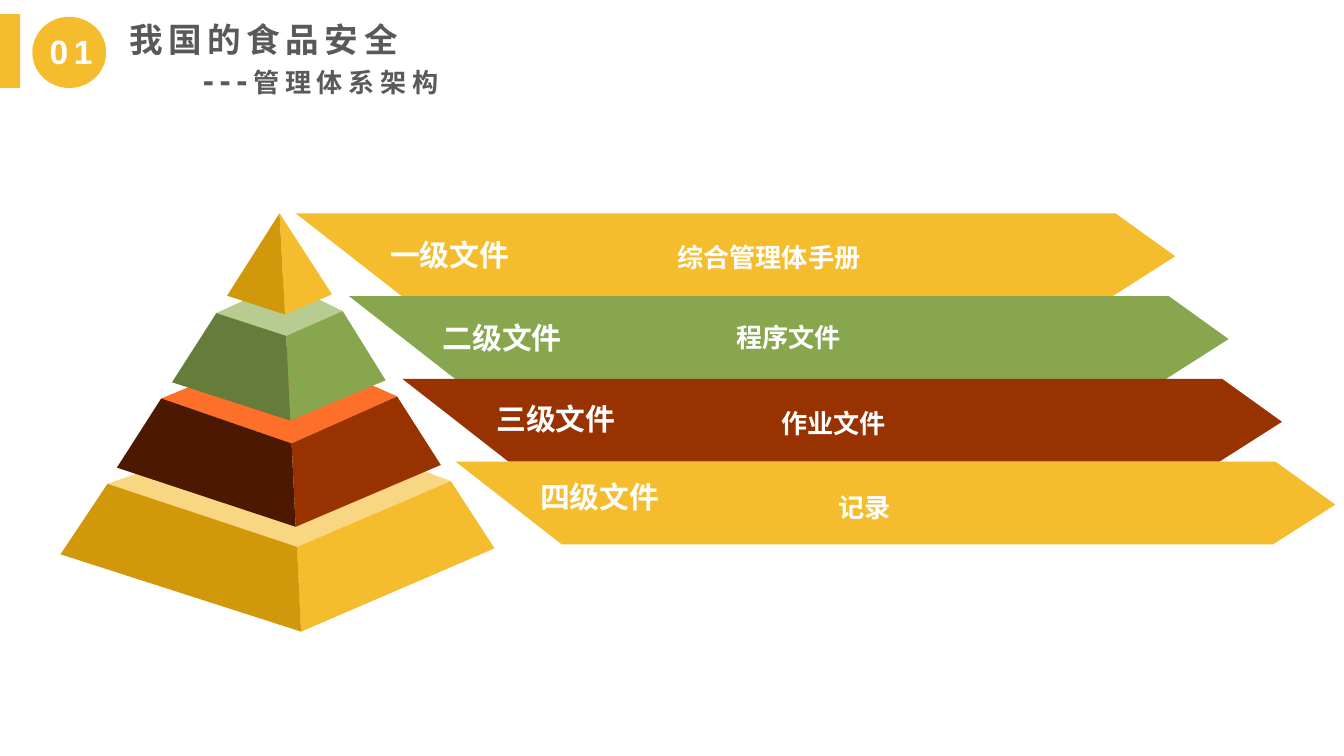
from pptx import Presentation
from pptx.dml.color import RGBColor
from pptx.enum.shapes import MSO_SHAPE
from pptx.enum.text import MSO_ANCHOR, MSO_AUTO_SIZE, PP_ALIGN
from pptx.oxml.ns import qn
from pptx.util import Inches, Pt
from lxml.etree import SubElement

CELL = Inches(0.1)
COLS, ROWS = 100, 56.25
AMBER, GREEN, RUST, WHITE, GREY = "F5BD2E", "88A64E", "983201", "FFFFFF", "595959"
CJK = "Noto Sans CJK SC"

BAND_TOP, BAND_LEFT, BAND_STEP, BAND_HEIGHT = 15.87, 22, 3.97, 6.16
BAND_OUTLINE = [(0, 0), (61, 0), (65.45, 3.2), (60.8, BAND_HEIGHT), (7.9, BAND_HEIGHT)]
BANDS = [
    (AMBER, "一级文件", (28.05, 17.1), "综合管理体手册", (49.4, 17.45)),
    (GREEN, "二级文件", (31.95, 23.3), "程序文件", (53.8, 23.4)),
    (RUST, "三级文件", (35.95, 29.3), "作业文件", (57.15, 29.8)),
    (AMBER, "四级文件", (39.2, 35.1), "记录", (61.4, 36.05)),
]

APEX = (20.8, 15.87)
TIERS = [
    (("F9D782", AMBER, "D0980A"), (21.6, 31.3), [(8, 36), (22.1, 40.7), (33.55, 35.8)],
     [(4.5, 41.25), (22.4, 47), (36.8, 40.8)]),
    (("FE6F2A", RUST, "4C1900"), (21.3, 25.8), [(12, 29.65), (21.7, 33), (29.55, 29.5)],
     [(8.7, 34.8), (22, 39.2), (32.8, 34.6)]),
    (("B8CC92", GREEN, "667C3B"), (21.1, 21), [(16.1, 23.3), (21.3, 25), (25.5, 23.15)],
     [(12.8, 28.45), (21.6, 31.3), (28.7, 28.3)]),
    ((None, AMBER, "D0980A"), APEX, [APEX] * 3,
     [(16.9, 22), (21.2, 23.4), (24.7, 21.9)]),
]


def cells(*values):
    return [round(v * CELL) for v in values]


def rgb(value):
    return RGBColor.from_string(value)


def paint(sp, color):
    sp.shadow.inherit = False
    sp.fill.solid()
    sp.fill.fore_color.rgb = rgb(color)
    sp.line.fill.background()


def add_preset(shapes, kind, box, color):
    paint(shapes.add_shape(kind, *cells(*box)), color)


def add_polygon(shapes, points, color):
    start, *rest = [tuple(cells(*point)) for point in points]
    builder = shapes.build_freeform(*start)
    builder.add_line_segments(rest, close=True)
    paint(builder.convert_to_shape(), color)


def add_run(p, text, size, color, font=CJK, spacing=0):
    r = p.add_run()
    r.text = text
    r.font.size = Pt(size)
    r.font.bold = True
    r.font.name = font
    r.font.color.rgb = rgb(color)
    SubElement(r.font._element, qn("a:ea")).set("typeface", CJK)
    if spacing:
        r.font._element.set("spc", str(spacing * 100))


def add_break(p, size):
    p.add_line_break()
    SubElement(p._p[-1], qn("a:rPr")).set("sz", str(size * 100))


def set_frame(tf, side, edge, wrap=True):
    tf.margin_left = tf.margin_right = Inches(side)
    tf.margin_top = tf.margin_bottom = Inches(edge)
    tf.word_wrap = wrap
    tf.vertical_anchor = MSO_ANCHOR.TOP
    tf.auto_size = MSO_AUTO_SIZE.SHAPE_TO_FIT_TEXT


def add_label(shapes, text, place, size, width, height, align=PP_ALIGN.LEFT):
    tf = shapes.add_textbox(*cells(*place, width, height)).text_frame
    set_frame(tf, 0.1, 0.05)
    p = tf.paragraphs[0]
    p.alignment = align
    add_run(p, text, size, WHITE)


def add_header(s):
    add_preset(s.shapes, MSO_SHAPE.OVAL, (2.4, 1.25, 5.5, 5.3), AMBER)
    add_preset(s.shapes, MSO_SHAPE.RECTANGLE, (-0.1, 1.05, 1.6, 5.5), AMBER)
    tf = s.shapes.add_textbox(*cells(3, 1.9, 5, 3.7)).text_frame
    set_frame(tf, 0.07, 0.04, wrap=False)
    add_run(tf.paragraphs[0], "01", 18, WHITE, "Arial", 3)

    title = s.shapes.title
    title.left, title.top, title.width, title.height = cells(7.9, 1, 44.9, 6.8)
    tf = title.text_frame
    set_frame(tf, 0.07, 0.04)
    p = tf.paragraphs[0]
    p.alignment = PP_ALIGN.LEFT
    hanging = p._p.get_or_add_pPr()
    hanging.set("marL", str(Inches(0.65)))
    hanging.set("indent", str(Inches(-0.55)))
    add_run(p, "我国的食品安全", 18, GREY, "Arial", 3)
    add_break(p, 18)
    add_run(p, "---", 18, GREY, "Arial", 3)
    add_run(p, "管理体系架构", 14, GREY, "Arial", 3)


def add_band(shapes, row, color):
    left, top = BAND_LEFT + row * BAND_STEP, BAND_TOP + row * BAND_HEIGHT
    add_polygon(shapes, [(left + x, top + y) for x, y in BAND_OUTLINE], color)


def add_tier(shapes, colors, back, upper, lower):
    group = shapes.add_group_shape().shapes
    lid, right, left = colors
    if lid:
        add_polygon(group, [back, *reversed(upper)], lid)
    add_polygon(group, [*upper[1:], *reversed(lower[1:])], right)
    add_polygon(group, [*upper[:2], *reversed(lower[:2])], left)


def main():
    prs = Presentation()
    prs.slide_width, prs.slide_height = cells(COLS, ROWS)
    s = prs.slides.add_slide(prs.slide_layouts[5])
    add_header(s)
    for row, band in enumerate(BANDS):
        add_band(s.shapes, row, band[0])
    for tier in TIERS:
        add_tier(s.shapes, *tier)
    for _, level, level_place, document, document_place in BANDS:
        add_label(s.shapes, level, level_place, 16, 11.9, 3.7)
        add_label(s.shapes, document, document_place, 14, 32, 3.3, PP_ALIGN.JUSTIFY)
    prs.save("out.pptx")


if __name__ == "__main__":
    main()
